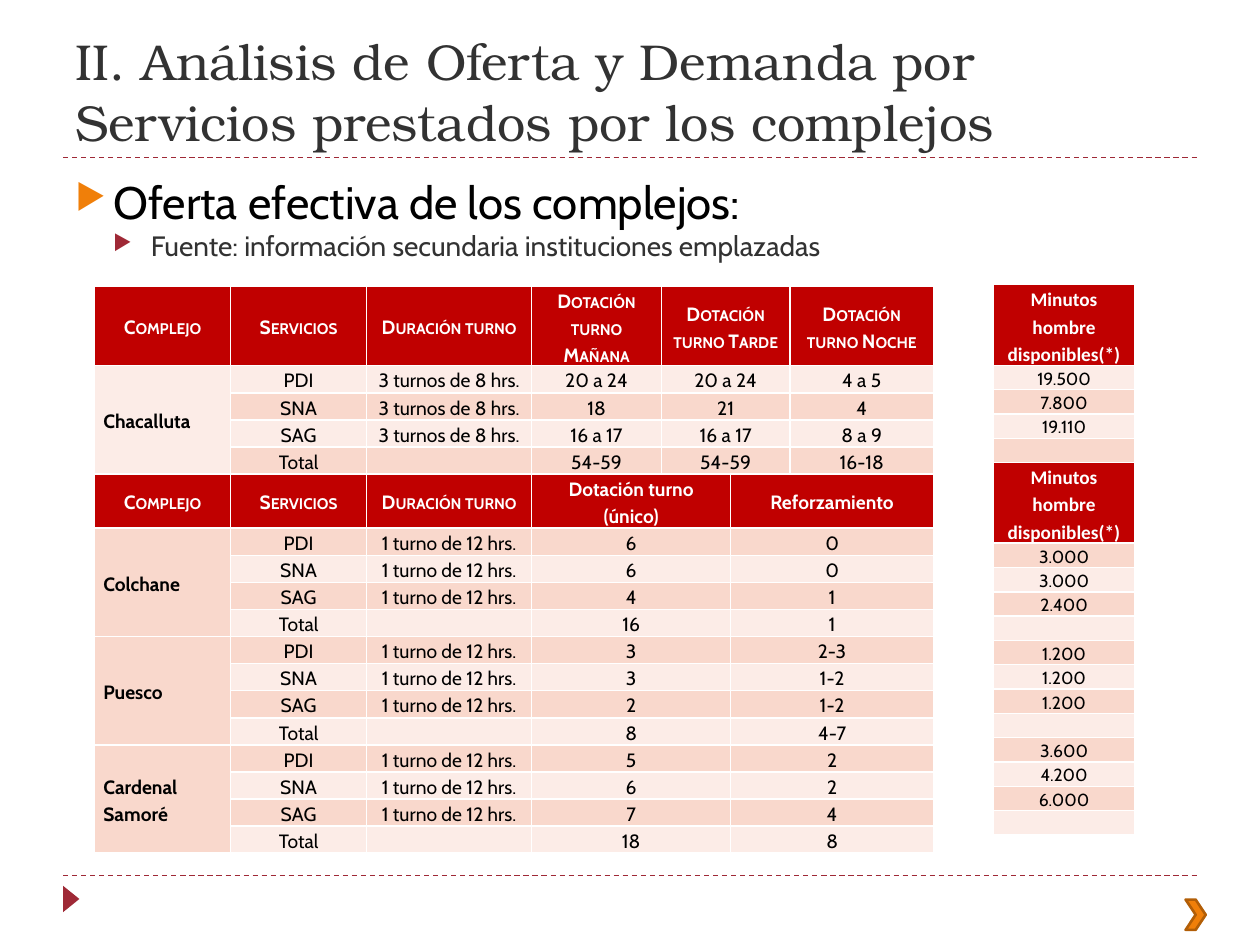
import pptx
import pptx.util
import pptx.dml.color
import pptx.enum.dml
import pptx.enum.shapes
import pptx.enum.text
import pptx.oxml
import pptx.oxml.ns
import lxml.etree

Inches, Pt = pptx.util.Inches, pptx.util.Pt
RGB = pptx.dml.color.RGBColor
Shape = pptx.enum.shapes.MSO_SHAPE
Align = pptx.enum.text.PP_ALIGN
Anchor = pptx.enum.text.MSO_ANCHOR
qn = pptx.oxml.ns.qn

RED, PALE, PINK = RGB(0xC0, 0, 0), RGB(0xFC, 0xEC, 0xE7), RGB(0xF9, 0xD8, 0xCC)
WHITE, BLACK, GRAY = RGB(255, 255, 255), RGB(0, 0, 0), RGB(0x32, 0x32, 0x32)
WINE, ORANGE, BROWN = RGB(0x9F, 0x29, 0x36), RGB(0xF0, 0x7F, 0x09), RGB(0xB2, 0x5E, 0x07)

# Content
TITLE = "II. Análisis de Oferta y Demanda por Servicios prestados por los complejos"
POINTS = [  # text, size, colour, bullet colour, indent, space before
    ("Oferta efectiva de los complejos:", 26, BLACK, ORANGE, 0.3, 6),
    ("Fuente: información secundaria instituciones emplazadas", 16, GRAY, WINE, 0.6, 0),
]
HEADS = ["Complejo", "Servicios", "Duración turno"]
UNITS = ["PDI", "SNA", "SAG", "Total"]
MINUTES = "Minutos hombre disponibles(*)"
SHIFTS = {
    "heads": ["Dotación turno Mañana", "Dotación turno Tarde", "Dotación turno Noche"],
    "caps": True, "starts": [3, 4, 6], "fills": [PALE, PINK], "hours": "3 turnos de 8 hrs.",
    "sites": [("Chacalluta",
               [("20 a 24", "20 a 24", "4 a 5"), ("18", "21", "4"),
                ("16 a 17", "16 a 17", "8 a 9"), ("54-59", "54-59", "16-18")],
               ["19.500", "7.800", "19.110", ""])],
}
SINGLE = {
    "heads": ["Dotación turno (único)", "Reforzamiento"],
    "caps": False, "starts": [3, 5], "fills": [PINK, PALE], "hours": "1 turno de 12 hrs.",
    "sites": [("Colchane", [("6", "0"), ("6", "0"), ("4", "1"), ("16", "1")],
               ["3.000", "3.000", "2.400", ""]),
              ("Puesco", [("3", "2-3"), ("3", "1-2"), ("2", "1-2"), ("8", "4-7")],
               ["1.200", "1.200", "1.200", ""]),
              ("Cardenal Samoré", [("5", "2"), ("6", "2"), ("7", "4"), ("18", "8")],
               ["3.600", "4.200", "6.000", ""])],
}
COLS = [1.08, 1.08, 1.31, 1.03, 0.55, 0.47, 1.14]
ROWS = 18


def style(run, size, color, font="Cabin", bold=False):
    run.font.size, run.font.name, run.font.bold = Pt(size), font, bold
    run.font.color.rgb = color


def put(cell, text, fill, size=11, color=BLACK, font="Cabin", bold=False,
        caps=False, align=Align.CENTER, anchor=Anchor.MIDDLE, pad=0.07):
    cell.fill.solid()
    cell.fill.fore_color.rgb = fill
    cell.margin_left = cell.margin_right = Inches(pad)
    cell.margin_top = cell.margin_bottom = 0
    cell.vertical_anchor = anchor
    para = cell.text_frame.paragraphs[0]
    para.alignment, para.line_spacing = align, 1.15
    if text:
        run = para.add_run()
        run.text = text
        style(run, size, color, font, bold)
        if caps:
            run.font._element.set("cap", "small")
    else:
        lxml.etree.SubElement(para._p, qn("a:endParaRPr"), sz=str(size * 100))


def grid(left, top, cols, heights):
    frame = slide.shapes.add_table(len(heights), len(cols), Inches(left), Inches(top),
                                   Inches(sum(cols)), Inches(sum(heights)))
    table = frame.table
    table.first_row = table.horz_banding = False
    for col, width in zip(table.columns, cols):
        col.width = Inches(width)
    for row, height in zip(table.rows, heights):
        row.height = Inches(height)
    return table


def border(table):
    for cell in table.iter_cells():
        props = cell._tc.get_or_add_tcPr()
        for i, side in enumerate(("lnL", "lnR", "lnT", "lnB")):
            props.insert(i, pptx.oxml.parse_xml(
                f'<a:{side} xmlns:a="http://schemas.openxmlformats.org/drawingml/2006/main"'
                ' w="12700"><a:solidFill><a:srgbClr val="FFFFFF"/></a:solidFill>'
                f'</a:{side}>'))


def box(left, top, width, height):
    frame = slide.shapes.add_textbox(*map(Inches, (left, top, width, height))).text_frame
    frame.word_wrap = True
    return frame


def mark(kind, left, top, width, height, fill):
    shape = slide.shapes.add_shape(kind, *map(Inches, (left, top, width, height)))
    shape.shadow.inherit = False
    shape.fill.solid()
    shape.fill.fore_color.rgb = fill
    shape.line.fill.background()
    return shape


deck = pptx.Presentation()
deck.slide_width, deck.slide_height = Inches(10), Inches(7.5)
slide = deck.slides.add_slide(deck.slide_layouts[6])

# Dashed rules and corner marks
for y in (6.95, 1.25):
    rule = slide.shapes.add_connector(pptx.enum.shapes.MSO_CONNECTOR.STRAIGHT,
                                      Inches(0.5), Inches(y), Inches(9.5), Inches(y))
    rule.line.color.rgb, rule.line.width = WINE, Pt(0.75)
    rule.line.dash_style = pptx.enum.dml.MSO_LINE.DASH
    lxml.etree.SubElement(rule._element.spPr, qn("a:effectLst"))
mark(Shape.ISOSCELES_TRIANGLE, 0.46, 7.07, 0.21, 0.13, WINE).rotation = 90
arrow = mark(Shape.CHEVRON, 9.41, 7.14, 0.16, 0.24, ORANGE)
arrow.line.color.rgb, arrow.line.width = BROWN, Pt(1.5)

# Title
head = box(0.5, 0.17, 9, 1.08)
head.vertical_anchor = Anchor.BOTTOM
head.text = TITLE
style(head.paragraphs[0].runs[0], 28.8, GRAY, "TeX Gyre Bonum")

# Bullets
body = box(0.5, 1.33, 9, 0.85)
for i, (text, size, color, tint, indent, before) in enumerate(POINTS):
    para = body.add_paragraph() if i else body.paragraphs[0]
    para.text, para.space_before = text, Pt(before)
    style(para.runs[0], size, color)
    props = para._p.get_or_add_pPr()
    props.set("marL", str(Inches(indent)))
    props.set("indent", str(Inches(-0.3)))
    hue = lxml.etree.SubElement(props, qn("a:buClr"))
    lxml.etree.SubElement(hue, qn("a:srgbClr"), val=str(tint))
    lxml.etree.SubElement(props, qn("a:buSzPct"), val="76000")
    lxml.etree.SubElement(props, qn("a:buChar"), char="▶")

# Staff table and minutes table, filled side by side
staff = grid(0.75, 2.27, COLS, [0.63] + [0.215] * 4 + [0.43] + [0.215] * 12)
mins = grid(7.88, 2.26, [1.13], [0.64] + [0.193] * 4 + [0.64] + [0.193] * 12)
row = 0
for part in (SHIFTS, SINGLE):
    starts = [0, 1, 2] + part["starts"]
    ends = starts[1:] + [len(COLS)]
    for i, text in enumerate(HEADS + part["heads"]):
        put(staff.cell(row, starts[i]), text, RED, color=WHITE, bold=True,
            caps=i < len(HEADS) or part["caps"])
    put(mins.cell(row, 0), MINUTES, RED, color=WHITE, font="Calibri", bold=True)
    last = row + 4 * len(part["sites"])
    for r in range(row, last + 1):
        for a, b in zip(starts, ends):
            if b - a > 1:
                staff.cell(r, a).merge(staff.cell(r, b - 1))
    row += 1
    for site, counts, times in part["sites"]:
        staff.cell(row, 0).merge(staff.cell(row + 3, 0))
        put(staff.cell(row, 0), site, part["fills"][0], bold=True, align=Align.LEFT)
        for k, (unit, count, time) in enumerate(zip(UNITS, counts, times)):
            fill = part["fills"][k % 2]
            hours = "" if unit == "Total" else part["hours"]
            for col, text in zip(starts[1:], (unit, hours) + count):
                put(staff.cell(row, col), text, fill)
            put(mins.cell(row, 0), time, fill, size=10, anchor=Anchor.TOP, pad=0.05)
            row += 1
border(staff)
border(mins)

deck.save("out.pptx")
